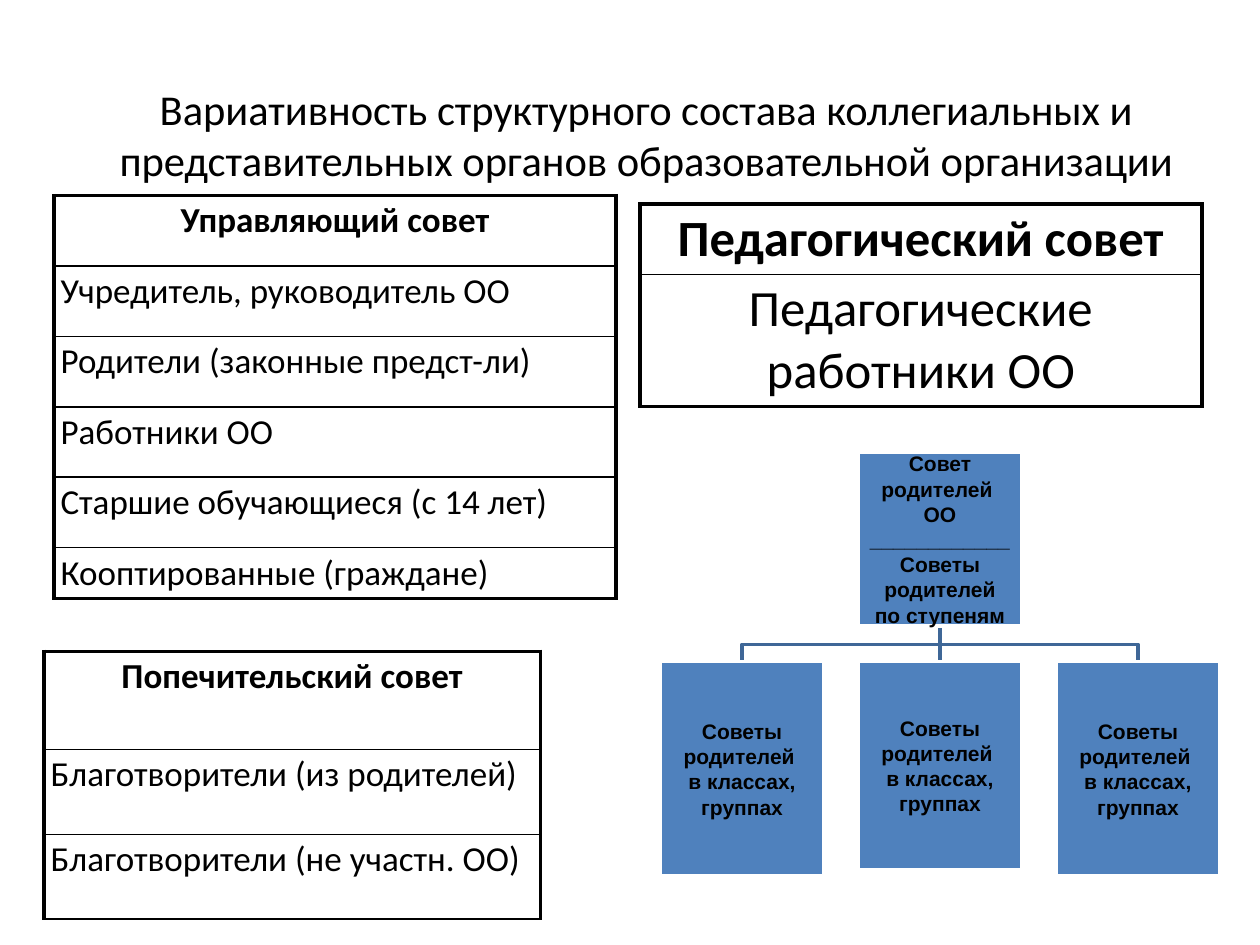
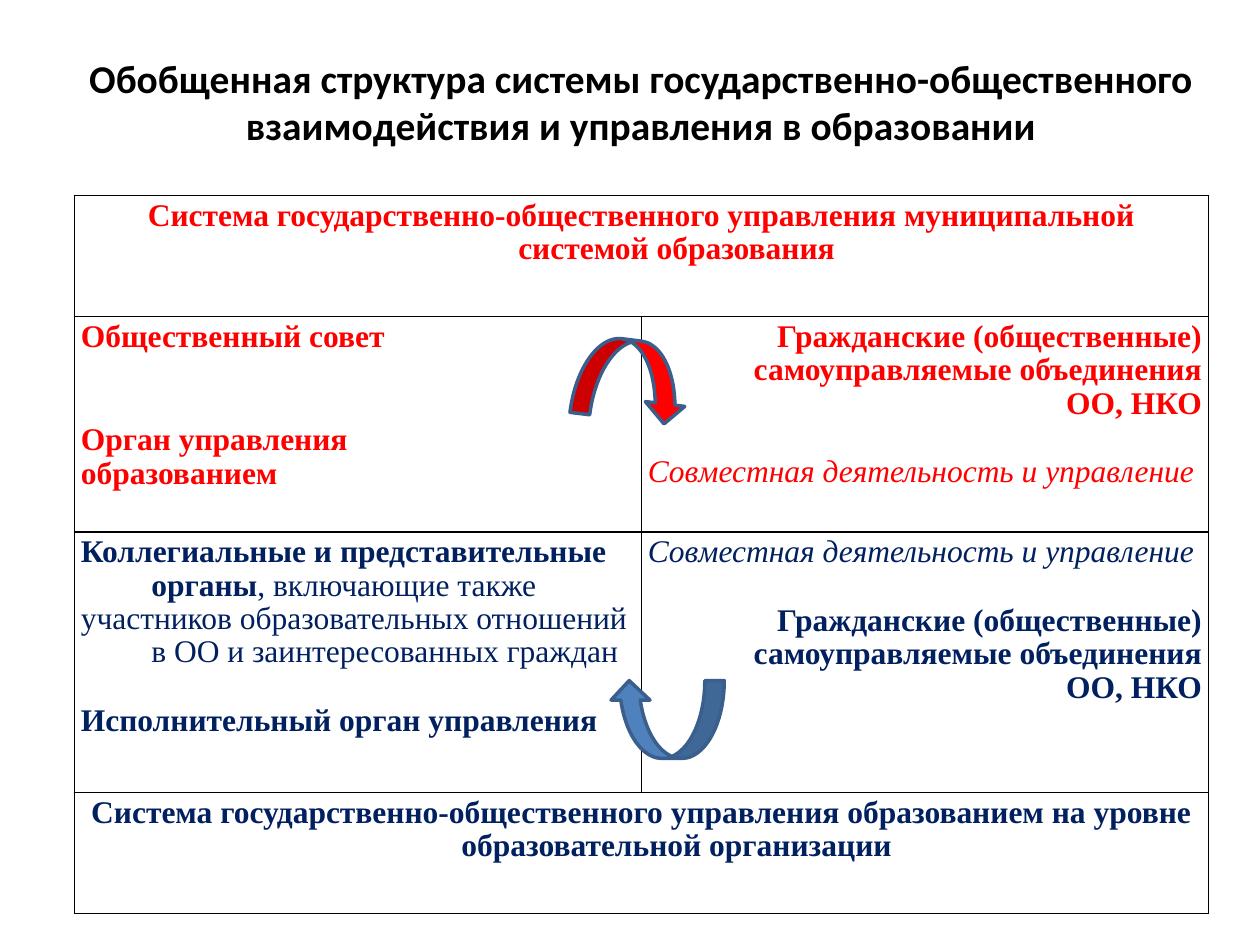
from lxml import etree
from pptx import Presentation
from pptx import util as u
from pptx.dml.color import RGBColor
from pptx.enum import shapes, text
from pptx.oxml import ns

# Colours
BLACK = RGBColor(0x00, 0x00, 0x00)
WHITE = RGBColor(0xFF, 0xFF, 0xFF)
RED = RGBColor(0xFF, 0x00, 0x00)
NAVY = RGBColor(0x00, 0x20, 0x60)
BLUE = RGBColor(0x4F, 0x81, 0xBD)
STEEL = RGBColor(0x3F, 0x67, 0x97)
EDGE = RGBColor(0x3A, 0x5F, 0x8C)

# Fonts, alignment, line widths
SANS, ARIAL, SERIF = "Calibri", "Arial", "Times New Roman"
LEFT, MID, RIGHT = (text.PP_ALIGN.LEFT, text.PP_ALIGN.CENTER,
                    text.PP_ALIGN.RIGHT)
THIN, THICK = 1, 2.25
LINE = 20  # height of one line in the scheme table, points


def cm(*vals):
    return [u.Cm(v) for v in vals]


# Text: a paragraph is (align, space before, (words, style), ...)
def put(frame, paras, font, size, color, hang=0, pitch=None):
    frame.word_wrap = True
    for i, (align, gap, *runs) in enumerate(paras):
        para = frame.add_paragraph() if i else frame.paragraphs[0]
        para.alignment = align
        para.space_before = u.Pt(gap)
        para.line_spacing = pitch
        if hang:
            props = para._p.get_or_add_pPr()
            props.set("marL", str(u.Cm(hang)))
            props.set("indent", str(-u.Cm(hang)))
        for words, style in runs:
            run = para.add_run()
            run.text = words
            run.font.name, run.font.size = font, u.Pt(size)
            run.font.bold, run.font.italic = "b" in style, "i" in style
            run.font.color.rgb = color


def inset(item, side, top):
    item.margin_left = item.margin_right = u.Cm(side)
    item.margin_top = item.margin_bottom = u.Cm(top)


def start(deck, words, box, size, style=""):
    slide = deck.slides.add_slide(deck.slide_layouts[5])
    title = slide.shapes.title
    title.left, title.top, title.width, title.height = cm(*box)
    frame = title.text_frame
    frame.auto_size = text.MSO_AUTO_SIZE.NONE
    frame.vertical_anchor = text.MSO_ANCHOR.MIDDLE
    put(frame, [(MID, 0, (words, style))], SANS, size, BLACK)
    return slide


# Tables
def frame_cell(cell, left, right, top, low):
    cell.fill.background()
    props = cell._tc.get_or_add_tcPr()
    sides = zip(("lnL", "lnR", "lnT", "lnB"), (left, right, top, low))
    for i, (tag, width) in enumerate(sides):
        line = etree.Element(ns.qn("a:" + tag), w=str(u.Pt(width)))
        fill = etree.SubElement(line, ns.qn("a:solidFill"))
        etree.SubElement(fill, ns.qn("a:srgbClr"), val=str(BLACK))
        props.insert(i, line)


def grid(slide, left, top, cols, rows, side=THIN, head=THIN, foot=THIN):
    table = slide.shapes.add_table(
        len(rows), len(cols), *cm(left, top, sum(cols), sum(rows))).table
    table.first_row = table.horz_banding = False
    for col, width in zip(table.columns, cols):
        col.width = u.Cm(width)
    for i, (row, height) in enumerate(zip(table.rows, rows)):
        row.height = u.Cm(height)
        for cell in row.cells:
            inset(cell, 0.13, 0.08)
            frame_cell(cell, side, side, THIN if i else head,
                       foot if i == len(rows) - 1 else THIN)
    return table


def council(slide, left, top, width, rows, lines, size, align=LEFT,
            foot=THICK):
    table = grid(slide, left, top, [width], rows, THICK, THICK, foot)
    for i, words in enumerate(lines):
        para = (align, 0, (words, "")) if i else (MID, 0, (words, "b"))
        put(table.cell(i, 0).text_frame, [para], SANS, size, BLACK)


# Shapes
def paint(shape, fill, line):
    shape.shadow.inherit = False
    shape.fill.solid()
    shape.fill.fore_color.rgb = fill
    shape.line.color.rgb = line
    shape.line.width = u.Pt(2)


def node(slide, left, top, height, lines):
    box = slide.shapes.add_shape(shapes.MSO_SHAPE.RECTANGLE,
                                 *cm(left, top, 3.3, height))
    paint(box, BLUE, WHITE)
    frame = box.text_frame
    inset(frame, 0.03, 0.03)
    frame.vertical_anchor = text.MSO_ANCHOR.MIDDLE
    put(frame, [(MID, 0, (line, "b")) for line in lines], ARIAL, 12, BLACK)


def branch(slide, x, top, end, low):
    """Bent line from the parent at x down to a child at end."""
    bend = (top + low) / 2
    pen = slide.shapes.build_freeform(*cm(x, top))
    pen.add_line_segments([cm(x, bend), cm(end, bend), cm(end, low)],
                          close=False)
    link = pen.convert_to_shape()
    link.shadow.inherit = False
    link.fill.background()
    link.line.color.rgb, link.line.width = STEEL, u.Pt(2)


def trunk(slide, x, top, low):
    link = slide.shapes.add_connector(shapes.MSO_CONNECTOR.STRAIGHT,
                                      *cm(x, top, x, low))
    link.line.color.rgb, link.line.width = STEEL, u.Pt(2)
    etree.SubElement(link._element.spPr, ns.qn("a:effectLst"))


def arrow(slide, box, turn, fill):
    curve = slide.shapes.add_shape(shapes.MSO_SHAPE.CURVED_DOWN_ARROW,
                                   *cm(*box))
    curve.rotation = turn
    paint(curve, fill, EDGE)


def tree(slide):
    left, step, half, head, low = 13.31, 3.99, 1.65, 9.12, 13.34
    lefts = [left + i * step for i in range(3)]
    mid, base = lefts[1] + half, head + 3.52
    for x in (lefts[2], lefts[0]):
        branch(slide, mid, base, x + half, low)
    trunk(slide, mid, base, low)
    node(slide, lefts[1], head, 3.5,
         ["Совет родителей ", "ОО", "____________", "Советы родителей",
          "по ступеням"])
    for x, height in zip(lefts, (4.32, 4.19, 4.32)):
        node(slide, x, low, height,
             ["Советы родителей ", "в классах,", "группах"])


def scheme(slide):
    table = grid(slide, 1.5, 3.94, [11.43] * 2, [2.44, 4.34, 5.26, 2.44])
    joint = ("Совместная деятельность и управление", "i")
    civic = ("Гражданские (общественные) самоуправляемые объединения", "b")
    orgs = ("ОО, НКО", "b")
    cells = [
        (0, 0, RED, [(MID, 0, (
            "Система государственно-общественного управления "
            "муниципальной системой образования", "b"))]),
        (1, 0, RED, [(LEFT, 0, ("Общественный совет", "b")),
                     (LEFT, 2 * LINE, ("Орган управления", "b")),
                     (LEFT, 0, ("образованием", "b"))]),
        (1, 1, RED, [(RIGHT, 0, civic), (RIGHT, 0, orgs),
                     (LEFT, LINE, joint)]),
        (2, 0, NAVY, [
            (LEFT, 0, ("Коллегиальные и представительные органы", "b"),
             (", включающие также", "")),
            (LEFT, 0, ("участников образовательных отношений в ОО и "
                       "заинтересованных граждан", "")),
            (LEFT, LINE, ("Исполнительный орган управления", "b"))]),
        (2, 1, NAVY, [(LEFT, 0, joint), (RIGHT, LINE, civic),
                      (RIGHT, 0, orgs)]),
        (3, 0, NAVY, [(MID, 0, (
            "Система государственно-общественного управления "
            "образованием на уровне образовательной организации", "b"))]),
    ]
    for row in (0, 3):
        table.cell(row, 0).merge(table.cell(row, 1))
    for row, col, color, paras in cells:
        put(table.cell(row, col).text_frame, paras, SERIF, 18, color,
            hang=1.42, pitch=0.96)


def main():
    deck = Presentation()
    deck.slide_width, deck.slide_height = cm(25.4, 19.05)

    # Slide 1: councils and their members
    slide = start(deck, "Вариативность структурного состава коллегиальных и "
                  "представительных органов образовательной организации",
                  (1.6, 1.12, 22.86, 3.18), 24.3)
    council(slide, 1.09, 3.94, 11.33, [1.42] * 5 + [1.01],
            ["Управляющий совет", "Учредитель, руководитель ОО",
             "Родители (законные предст-ли)", "Работники ОО",
             "Старшие обучающиеся (с 14 лет)", "Кооптированные (граждане)"],
            20)
    council(slide, 12.9, 4.11, 11.33, [1.42, 2.66],
            ["Педагогический совет", "Педагогические работники ОО"], 29, MID)
    council(slide, 0.89, 13.13, 10, [1.98, 1.71, 1.71],
            ["Попечительский совет", "Благотворители (из родителей)",
             "Благотворители (не участн. ОО)"], 20, foot=THIN)
    tree(slide)

    # Slide 2: overall scheme
    slide = start(deck, "Обобщенная структура системы "
                  "государственно-общественного взаимодействия и управления "
                  "в образовании", (1.5, 0.74, 22.86, 2.59), 22.5, "b")
    scheme(slide)
    arrow(slide, (11.58, 6.86, 2.31, 1.6), 7, RED)
    arrow(slide, (12.29, 13.72, 2.31, 1.57), 180, BLUE)

    deck.save("out.pptx")


if __name__ == "__main__":
    main()
